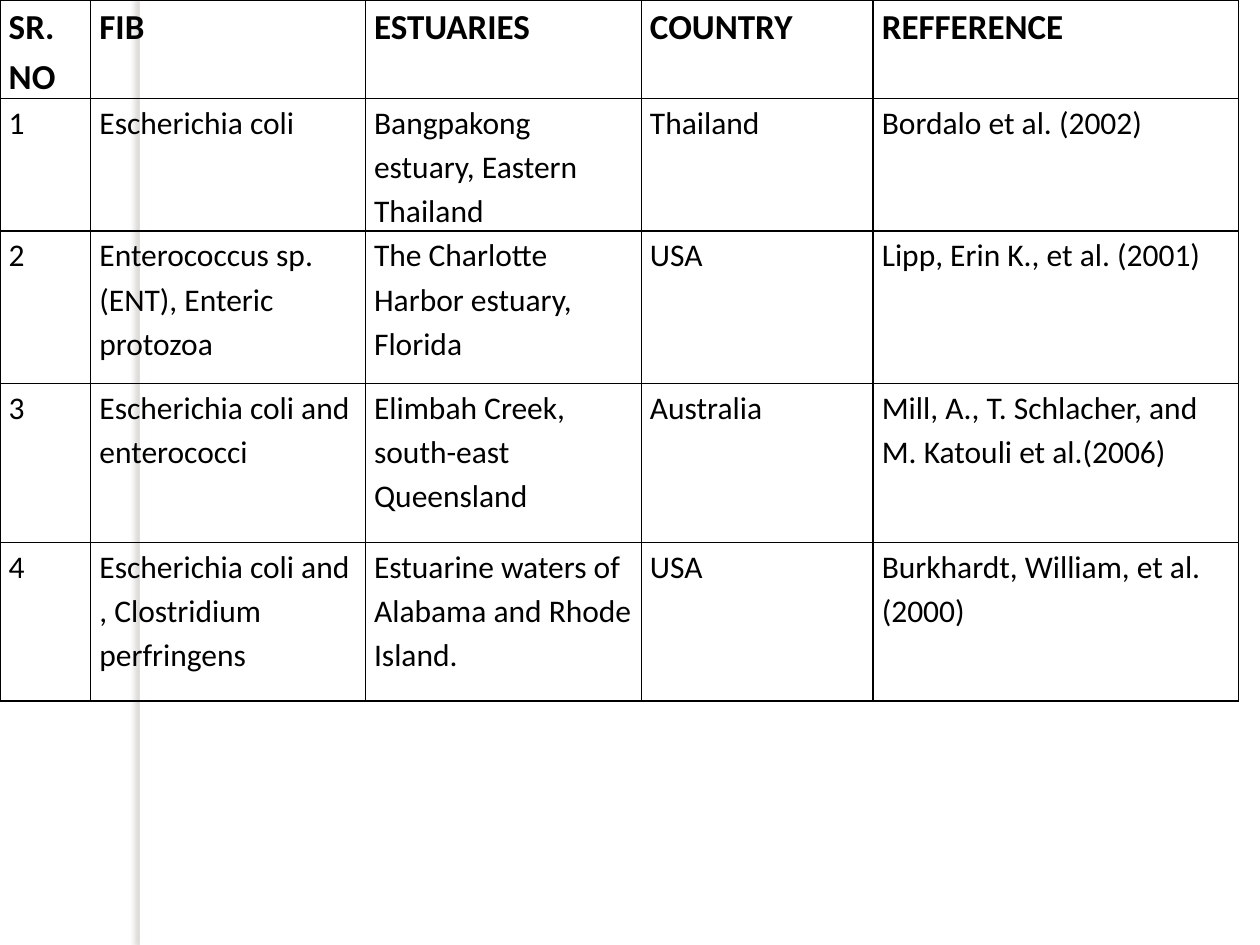
from lxml import etree
from pptx import Presentation
from pptx.dml.color import RGBColor
from pptx.enum.shapes import MSO_SHAPE
from pptx.oxml.ns import qn
from pptx.util import Pt

RECTANGLE = MSO_SHAPE.RECTANGLE
BLACK = RGBColor(0x00, 0x00, 0x00)
WHITE = RGBColor(0xFF, 0xFF, 0xFF)
SHADOW = RGBColor(0x73, 0x6F, 0x63)

COL_WIDTHS = [51.84, 156.96, 157.68, 132.48, 208.8]
ROW_HEIGHTS = [36, 61.2, 87.12, 90.72, 90.72]
MARGINS = {"margin_left": Pt(5), "margin_right": Pt(5),
           "margin_top": 0, "margin_bottom": 0}
HEADER_FONT = {"name": "Calibri", "size": Pt(20), "bold": True}
BODY_FONT = {"name": "Calibri", "size": Pt(18), "bold": False}

ROWS = [
    ["SR. NO", "FIB", "ESTUARIES", "COUNTRY", "REFFERENCE"],
    ["1", "Escherichia coli", "Bangpakong estuary, Eastern Thailand",
     "Thailand", "Bordalo et al. (2002)"],
    ["2", "Enterococcus sp. (ENT), Enteric protozoa",
     "The Charlotte Harbor estuary, Florida",
     "USA", "Lipp, Erin K., et al. (2001)"],
    ["3", "Escherichia coli and enterococci",
     "Elimbah Creek, south-east Queensland",
     "Australia", "Mill, A., T. Schlacher, and M. Katouli et al.(2006)"],
    ["4", "Escherichia coli and , Clostridium perfringens",
     "Estuarine waters of Alabama and Rhode Island.",
     "USA", "Burkhardt, William, et al. (2000)"],
]


def set_attrs(obj, values):
    for name, value in values.items():
        setattr(obj, name, value)


def add_solid_fill(parent, color):
    fill = etree.SubElement(parent, qn("a:solidFill"))
    return etree.SubElement(fill, qn("a:srgbClr"), val=str(color))


def add_shadowed_strip(s, left, top, width, height):
    """Add a white strip that casts a soft shadow to its left."""
    sp = s.shapes.add_shape(RECTANGLE, Pt(left), Pt(top), Pt(width), Pt(height))
    sp.fill.solid()
    sp.fill.fore_color.rgb = WHITE
    sp.line.fill.background()
    sp.shadow.inherit = False
    effects = sp.element.spPr.find(qn("a:effectLst"))
    shadow = etree.SubElement(effects, qn("a:outerShdw"), blurRad=str(Pt(3)),
                              dist=str(Pt(3)), dir="10800000",
                              algn="tl", rotWithShape="0")
    color = etree.SubElement(shadow, qn("a:srgbClr"), val=str(SHADOW))
    etree.SubElement(color, qn("a:alpha"), val="25000")


def add_borders(cell):
    tc_pr = cell._tc.get_or_add_tcPr()
    for side in ("lnL", "lnR", "lnT", "lnB"):
        ln = etree.SubElement(tc_pr, qn(f"a:{side}"), w=str(Pt(1)))
        add_solid_fill(ln, BLACK)


def fill_cell(cell, text, font):
    add_borders(cell)
    cell.fill.background()
    set_attrs(cell, MARGINS)
    p = cell.text_frame.paragraphs[0]
    p.line_spacing = 1.15
    r = p.add_run()
    r.text = text
    set_attrs(r.font, font)
    r.font.color.rgb = BLACK


def add_estuary_table(s):
    table = s.shapes.add_table(len(ROWS), len(COL_WIDTHS), 0, 0,
                               Pt(sum(COL_WIDTHS)), Pt(sum(ROW_HEIGHTS))).table
    table.first_row = table.horz_banding = False
    for column, width in zip(table.columns, COL_WIDTHS):
        column.width = Pt(width)
    for i, (row, height, texts) in enumerate(zip(table.rows, ROW_HEIGHTS, ROWS)):
        row.height = Pt(height)
        font = BODY_FONT if i else HEADER_FONT
        for cell, text in zip(row.cells, texts):
            fill_cell(cell, text, font)


def main():
    prs = Presentation()
    prs.slide_width, prs.slide_height = Pt(720), Pt(540)
    s = prs.slides.add_slide(prs.slide_layouts[6])
    add_shadowed_strip(s, 80, 0, 5.76, 540)
    add_estuary_table(s)
    prs.save("out.pptx")


if __name__ == "__main__":
    main()
